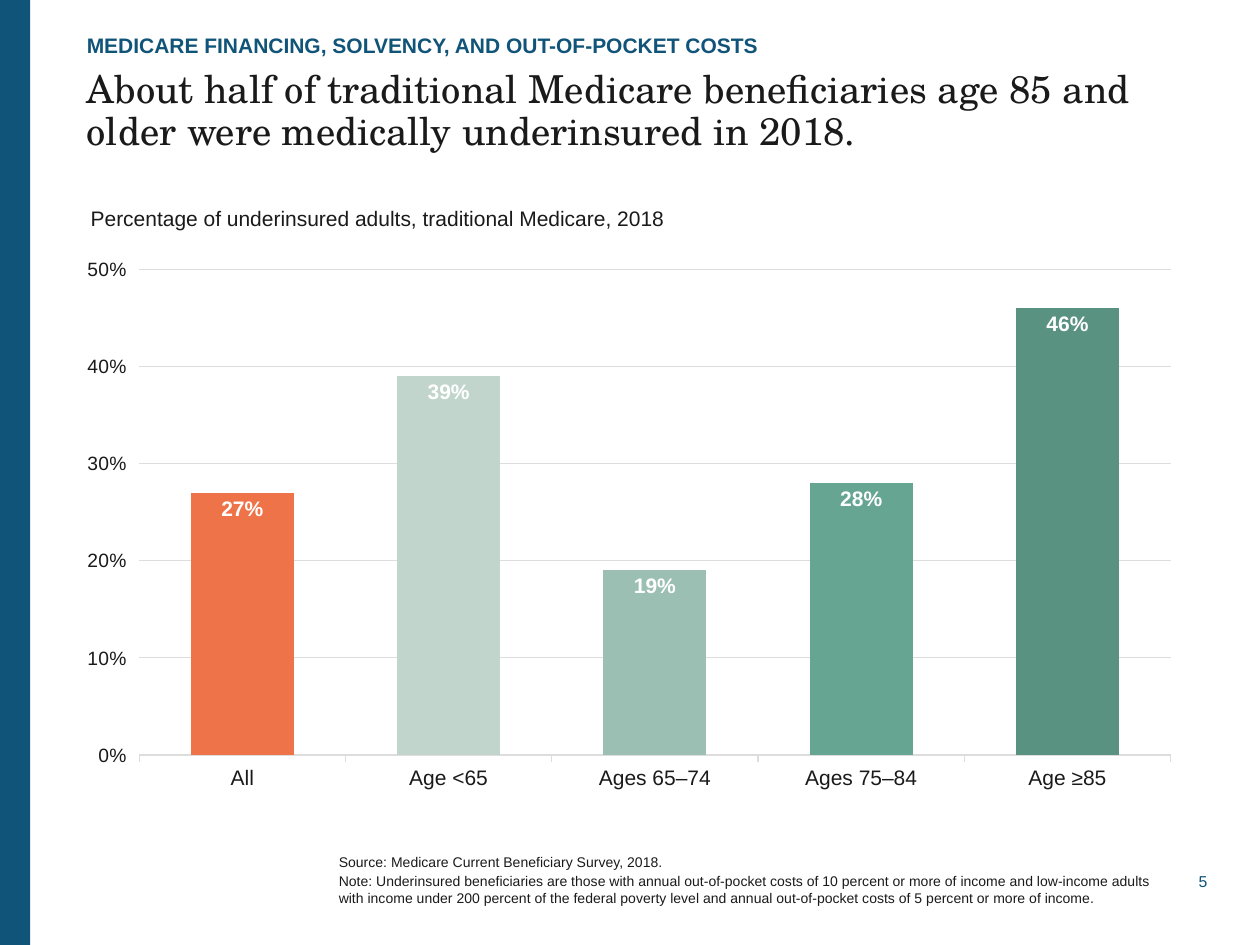
from lxml.etree import SubElement
from pptx import Presentation
from pptx.chart.data import CategoryChartData
from pptx.dml.color import RGBColor
from pptx.enum.chart import XL_CHART_TYPE, XL_LABEL_POSITION, XL_TICK_MARK
from pptx.enum.shapes import MSO_SHAPE
from pptx.enum.text import MSO_ANCHOR, PP_ALIGN
from pptx.oxml import parse_xml
from pptx.oxml.ns import nsdecls, qn
from pptx.util import Cm, Pt

SANS, SERIF = "Arial", "TeX Gyre Schola"
NAVY, INK, GRID, WHITE = "115479", "1A1A1A", "DDDDDD", "FFFFFF"
LEFT = 1.75

SECTION = "MEDICARE FINANCING, SOLVENCY, AND OUT-OF-POCKET COSTS"
HEADLINE = ("About half of traditional Medicare beneficiaries age 85 and older "
            "were medically underinsured in 2018.")
CHART_TITLE = "Percentage of underinsured adults, traditional Medicare, 2018"
GROUPS = [
    ("All", 0.27, "EE7348"),
    ("Age <65", 0.39, "C1D5CD"),
    ("Ages 65–74", 0.19, "9CBFB3"),
    ("Ages 75–84", 0.28, "65A591"),
    ("Age ≥85", 0.46, "599280"),
]
FOOTNOTES = [
    "Source: Medicare Current Beneficiary Survey, 2018.",
    "Note: Underinsured beneficiaries are those with annual out-of-pocket costs "
    "of 10 percent or more of income and low-income adults with income under 200 "
    "percent of the federal poverty level and annual out-of-pocket costs of 5 "
    "percent or more of income.",
]
PAGE_NUMBER = "5"


def color(hex_string):
    return RGBColor.from_string(hex_string)


def style(font, size, ink=INK, bold=False, face=SANS):
    font.name, font.size, font.bold = face, Pt(size), bold
    font.color.rgb = color(ink)


def add_text(slide, box, paragraphs, size, ink=INK, bold=False, face=SANS,
             anchor=MSO_ANCHOR.MIDDLE, align=PP_ALIGN.LEFT, spacing=None):
    frame = slide.shapes.add_textbox(*map(Cm, box)).text_frame
    frame.word_wrap = True
    frame.vertical_anchor = anchor
    frame.margin_left = frame.margin_right = 0
    frame.margin_top = frame.margin_bottom = 0
    for index, text in enumerate(paragraphs):
        paragraph = frame.add_paragraph() if index else frame.paragraphs[0]
        paragraph.alignment = align
        if spacing:
            paragraph.line_spacing = spacing
        if index:
            paragraph.space_before = Pt(size * 0.2)
        run = paragraph.add_run()
        run.text = text
        style(run.font, size, ink, bold, face)


def set_layout(parent, **values):
    for old in parent.findall(qn("c:layout")):
        parent.remove(old)
    layout = parse_xml(f"<c:layout {nsdecls('c')}/>")
    manual = SubElement(layout, qn("c:manualLayout"))
    for tag, value in values.items():
        SubElement(manual, qn(f"c:{tag}")).set("val", str(value))
    return layout


def grid_line(line):
    line.color.rgb = color(GRID)
    line.width = Pt(0.75)


def add_bars(slide):
    names, shares, fills = zip(*GROUPS)
    data = CategoryChartData(number_format="0%")
    data.categories = names
    data.add_series("Series 1", shares)
    chart = slide.shapes.add_chart(
        XL_CHART_TYPE.COLUMN_CLUSTERED,
        Cm(LEFT), Cm(4.06), Cm(22.48), Cm(12.24), data).chart
    chart.has_legend = False
    style(chart.font, 10)

    title = chart.chart_title
    run = title.text_frame.paragraphs[0].add_run()
    run.text = CHART_TITLE
    style(run.font, 12)
    title_xml = chart.element.find(".//" + qn("c:title"))
    title_layout = set_layout(title_xml, xMode="edge", yMode="edge", x=0, y=0)
    title_xml.find(qn("c:tx")).addnext(title_layout)
    title.include_in_layout = False

    plot_xml = chart.element.find(".//" + qn("c:plotArea"))
    plot_xml.insert(0, set_layout(
        plot_xml, layoutTarget="inner", xMode="edge", yMode="edge",
        x=0.05, y=0.11, w=0.92, h=0.8))
    for tag, value in dict(x=0.047, y=0.112, w=0.925).items():
        plot_xml.find(".//" + qn(f"c:{tag}")).set("val", str(value))

    groups, shares_axis = chart.category_axis, chart.value_axis
    for axis, size in ((groups, 12), (shares_axis, 11)):
        axis.major_tick_mark = XL_TICK_MARK.OUTSIDE
        axis.minor_tick_mark = XL_TICK_MARK.NONE
        style(axis.tick_labels.font, size)
    grid_line(groups.format.line)
    shares_axis.format.line.fill.background()
    shares_axis.minimum_scale, shares_axis.maximum_scale = 0, 0.5
    shares_axis.major_unit = 0.1
    shares_axis.tick_labels.number_format = "0%"
    shares_axis.tick_labels.number_format_is_linked = False
    shares_axis.has_major_gridlines = True
    grid_line(shares_axis.major_gridlines.format.line)

    plot = chart.plots[0]
    plot.gap_width = 100
    plot.vary_by_categories = False
    series = plot.series[0]
    for index, fill in enumerate(fills):
        bar = series.points[index].format.fill
        bar.solid()
        bar.fore_color.rgb = color(fill)
    labels = series.data_labels
    labels.show_value = True
    labels.position = XL_LABEL_POSITION.INSIDE_END
    labels.number_format = "0%"
    labels.number_format_is_linked = False
    style(labels.font, 12, WHITE, bold=True)


def main():
    deck = Presentation()
    deck.slide_width, deck.slide_height = Cm(25.4), Cm(19.05)
    slide = deck.slides.add_slide(deck.slide_layouts[6])

    band = slide.shapes.add_shape(MSO_SHAPE.RECTANGLE, 0, 0, Cm(0.61), deck.slide_height)
    band.shadow.inherit = False
    band.fill.solid()
    band.fill.fore_color.rgb = color(NAVY)
    band.line.fill.background()

    add_text(slide, (23.55, 17.48, 0.79, 0.56), [PAGE_NUMBER], 9, NAVY,
             align=PP_ALIGN.RIGHT)
    add_text(slide, (6.83, 16.66, 16.74, 2.16), FOOTNOTES, 8)
    add_text(slide, (LEFT, 1.42, 22.48, 2.03), [HEADLINE], 22, face=SERIF,
             anchor=MSO_ANCHOR.TOP, spacing=0.9)
    add_text(slide, (LEFT, 0.48, 22, 0.69), [SECTION], 12, NAVY, bold=True,
             anchor=MSO_ANCHOR.BOTTOM)
    add_bars(slide)
    deck.save("out.pptx")


if __name__ == "__main__":
    main()
